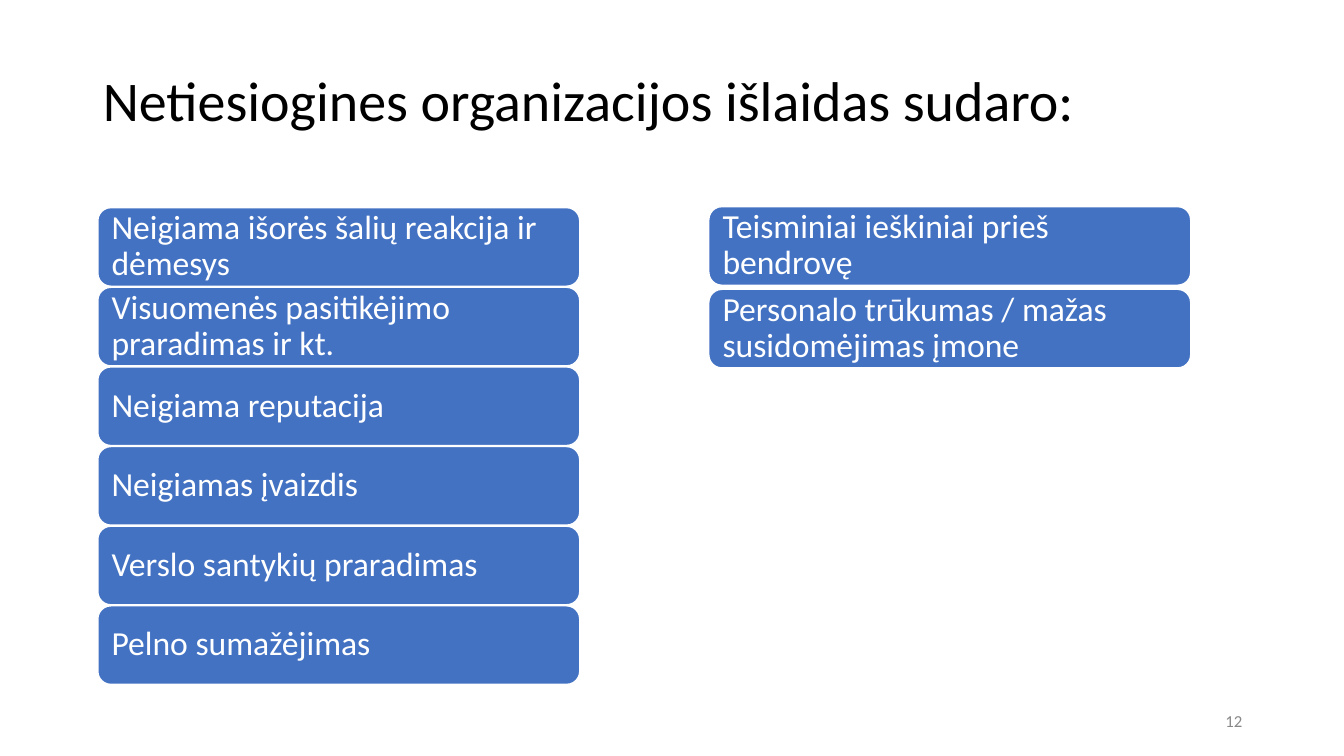
from pptx import Presentation
from pptx.dml.color import RGBColor
from pptx.enum.shapes import MSO_SHAPE
from pptx.enum.text import MSO_ANCHOR, MSO_AUTO_SIZE, PP_ALIGN
from pptx.util import Inches, Pt

ROUND = MSO_SHAPE.ROUNDED_RECTANGLE
MIDDLE = MSO_ANCHOR.MIDDLE
FIXED = MSO_AUTO_SIZE.NONE
LEFT, RIGHT = PP_ALIGN.LEFT, PP_ALIGN.RIGHT

TITLE = "Netiesiogines organizacijos išlaidas sudaro:"
COSTS = [
    "Neigiama išorės šalių reakcija ir dėmesys",
    "Visuomenės pasitikėjimo praradimas ir kt.",
    "Neigiama reputacija",
    "Neigiamas įvaizdis",
    "Verslo santykių praradimas",
    "Pelno sumažėjimas",
]
CLAIMS = [
    "Teisminiai ieškiniai prieš bendrovę",
    "Personalo trūkumas / mažas susidomėjimas įmone",
]
CARD_W, CARD_H = 4.78, 0.78


def color(code):
    return RGBColor.from_string(code)


def write(shape, text, size, code, align, space=1.0, pad=0.05):
    frame = shape.text_frame
    form = {
        "word_wrap": True,
        "auto_size": FIXED,
        "vertical_anchor": MIDDLE,
        "margin_left": Inches(0.1),
        "margin_right": Inches(0.1),
        "margin_top": Inches(pad),
        "margin_bottom": Inches(pad),
    }
    for name, value in form.items():
        setattr(frame, name, value)
    frame.text = text
    para = frame.paragraphs[0]
    para.alignment = align
    para.line_spacing = space
    font = para.runs[0].font
    for name, value in {"name": "Calibri", "size": Pt(size)}.items():
        setattr(font, name, value)
    font.color.rgb = color(code)


def head(slide, box):
    title = slide.shapes.title
    for name, value in zip(("left", "top", "width", "height"), box):
        setattr(title, name, Inches(value))
    write(title, TITLE, 40, "000000", LEFT, 0.9)


def stack(slide, left, top, step, items):
    for row, text in enumerate(items):
        box = (left, top + row * step, CARD_W, CARD_H)
        card = slide.shapes.add_shape(ROUND, *map(Inches, box))
        card.shadow.inherit = False
        card.fill.solid()
        card.fill.fore_color.rgb = color("4372C3")
        card.line.color.rgb = color("FFFFFF")
        card.line.width = Pt(1)
        write(card, text, 24, "FFFFFF", LEFT, 0.9, 0.1)


def number(slide, box):
    mark = slide.shapes.add_textbox(*map(Inches, box))
    write(mark, "12", 12, "888888", RIGHT)


def main():
    deck = Presentation()
    deck.slide_width, deck.slide_height = Inches(13.33), Inches(7.5)
    slide = deck.slides.add_slide(deck.slide_layouts[5])
    head(slide, (0.92, 0.3, 11.5, 1.45))
    stack(slide, 0.97, 2.06, 0.79, COSTS)
    stack(slide, 7.03, 2.05, 0.82, CLAIMS)
    number(slide, (9.42, 6.95, 3, 0.4))
    deck.save("out.pptx")


if __name__ == "__main__":
    main()
